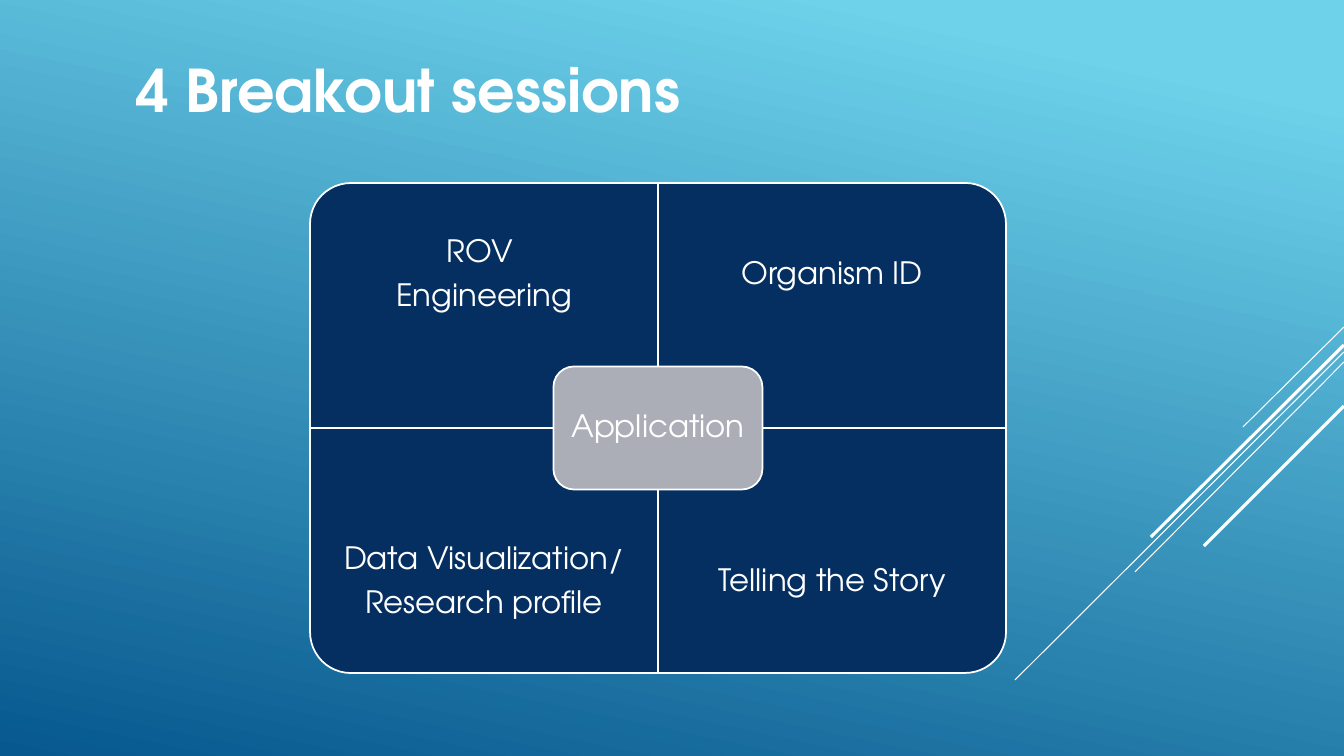
from lxml import etree
from pptx import Presentation
from pptx.dml.color import RGBColor
from pptx.enum.shapes import MSO_CONNECTOR as Conn, MSO_SHAPE as Geo
from pptx.enum.text import MSO_ANCHOR as Anchor, MSO_AUTO_SIZE as Fit, PP_ALIGN as Align
from pptx.oxml.ns import qn
from pptx.util import Emu, Pt

FONT, WHITE, NAVY, GREY = "TeX Gyre Adventor", "FFFFFF", "052F61", "ABADB7"


def px(*vals):
    return [Emu(round(v * 914400 / 100.8)) for v in vals]


def paint(color, code):
    color.rgb = RGBColor.from_string(code)


deck = Presentation()
deck.slide_width, deck.slide_height = px(1344, 756)
slide = deck.slides.add_slide(deck.slide_layouts[5])

# Background gradient
back = slide.background.fill
back.gradient()
back.gradient_angle = 258
for stop, (pos, code) in zip(back.gradient_stops, [(0.1, "6ED2EB"), (1, "06588E")]):
    stop.position = pos
    paint(stop.color, code)

# Diagonal streaks from the right edge: top, end x, end y, width
rays = slide.shapes.add_group_shape()
for top, x, y, width in [(327, 1243, 427, 0.75), (352, 1015, 680, 0.75),
                         (362, 1135, 572, 0.75), (345, 1151, 537, 2.25),
                         (406, 1204, 546, 2.25)]:
    ray = rays.shapes.add_connector(Conn.STRAIGHT, *px(1344, top, x, y))
    paint(ray.line.color, WHITE)
    ray.line.width = Pt(width)
    etree.SubElement(ray._element.spPr, qn("a:effectLst"))

# Title
title = slide.shapes.title
title.left, title.top, title.width, title.height = px(126, 49, 1034, 82)
frame = title.text_frame
frame.word_wrap = True
frame.auto_size = Fit.SHAPE_TO_FIT_TEXT
frame.vertical_anchor = Anchor.TOP
para = frame.paragraphs[0]
para.alignment = Align.LEFT
run = para.add_run()
run.text = "4 Breakout sessions"
run.font.name, run.font.size, run.font.bold = FONT, Pt(42), True
paint(run.font.color, WHITE)

# Quadrants around one centre, each turned so its round corner faces out
MIDX, MIDY, WIDE, HIGH = 658, 428, 348, 245
TEXT = 183
quads = [(-1, -1, 270, ["ROV ", "Engineering"]),
         (1, -1, 0, ["Organism ID"]),
         (-1, 1, 180, ["Data Visualization/", "Research profile"]),
         (1, 1, 90, ["Telling the Story"])]
cards, labels = [], []
for dx, dy, turn, lines in quads:
    x, y = MIDX + dx * WIDE / 2, MIDY + dy * HIGH / 2
    w, h = (HIGH, WIDE) if turn % 180 else (WIDE, HIGH)
    cards.append((Geo.ROUND_1_RECTANGLE, x, y, w, h, turn, NAVY))
    texty = MIDY + dy * (HIGH - TEXT / 2)
    labels.append((x, texty, WIDE, TEXT, 17, lines))

# Centre card
cards.append((Geo.ROUNDED_RECTANGLE, MIDX, MIDY, 209, 123, 0, GREY))
labels.append((MIDX, MIDY, 197, 111, 9, ["Application"]))

# Draw each card with its label
grid = slide.shapes.add_group_shape()
for card, label in zip(cards, labels):
    geo, x, y, w, h, turn, code = card
    shape = grid.shapes.add_shape(geo, *px(x - w / 2, y - h / 2, w, h))
    shape.rotation = turn
    shape.shadow.inherit = False
    shape.fill.solid()
    paint(shape.fill.fore_color, code)
    paint(shape.line.color, WHITE)
    shape.line.width = Pt(1.25)

    x, y, w, h, pad, lines = label
    box = grid.shapes.add_textbox(*px(x - w / 2, y - h / 2, w, h))
    frame = box.text_frame
    frame.word_wrap = True
    frame.vertical_anchor = Anchor.MIDDLE
    (frame.margin_left, frame.margin_top,
     frame.margin_right, frame.margin_bottom) = px(pad, pad, pad, pad)
    for i, line in enumerate(lines):
        para = frame.add_paragraph() if i else frame.paragraphs[0]
        para.alignment = Align.CENTER
        para.line_spacing = 0.9
        para.space_after = Pt(7.7)
        run = para.add_run()
        run.text = line
        run.font.name, run.font.size = FONT, Pt(22)
        paint(run.font.color, WHITE)

deck.save("out.pptx")
